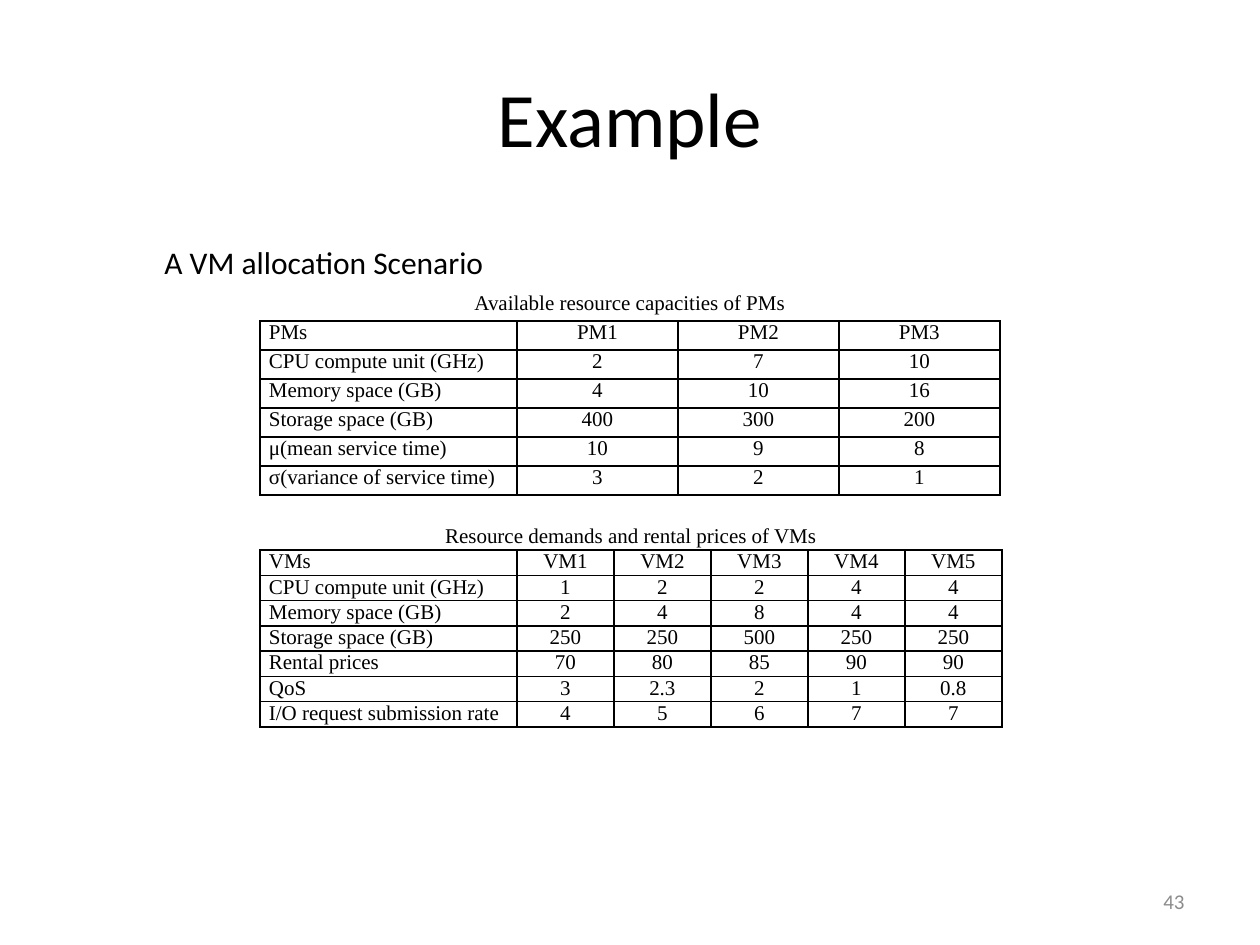
"""Build the VM allocation example slide with its two resource tables."""
from lxml import etree
from pptx import Presentation
from pptx.dml.color import RGBColor
from pptx.enum.text import MSO_ANCHOR, PP_ALIGN
from pptx.oxml.ns import qn
from pptx.util import Pt

LEFT, CENTER, RIGHT = PP_ALIGN.LEFT, PP_ALIGN.CENTER, PP_ALIGN.RIGHT
TOP, MIDDLE = MSO_ANCHOR.TOP, MSO_ANCHOR.MIDDLE
BLACK = RGBColor(0x00, 0x00, 0x00)
GRAY = RGBColor(0x8C, 0x8C, 0x8C)
PX = 914400 // 126
SANS, SERIF = "Calibri", "Times New Roman"
CELL_MARGIN = 9
LABEL_WIDTH = 257

TITLE = "Example"
SUBTITLE = "A VM allocation Scenario"
PAGE_NUMBER = "43"
TABLES = [
    {
        "caption": "Available resource capacities of PMs",
        "top": 292, "row_height": 29, "value_width": 161,
        "rows": [
            ("PMs", "PM1", "PM2", "PM3"),
            ("CPU compute unit (GHz)", "2", "7", "10"),
            ("Memory space (GB)", "4", "10", "16"),
            ("Storage space (GB)", "400", "300", "200"),
            ("μ(mean service time)", "10", "9", "8"),
            ("σ(variance of service time)", "3", "2", "1"),
        ],
    },
    {
        "caption": "Resource demands and rental prices of VMs",
        "top": 525, "row_height": 23, "value_width": 97,
        "rows": [
            ("VMs", "VM1", "VM2", "VM3", "VM4", "VM5"),
            ("CPU compute unit (GHz)", "1", "2", "2", "4", "4"),
            ("Memory space (GB)", "2", "4", "8", "4", "4"),
            ("Storage space (GB)", "250", "250", "500", "250", "250"),
            ("Rental prices", "70", "80", "85", "90", "90"),
            ("QoS", "3", "2.3", "2", "1", "0.8"),
            ("I/O request submission rate", "4", "5", "6", "7", "7"),
        ],
    },
]


def write_text(frame, text, size=12, font=SERIF, color=BLACK, align=LEFT):
    paragraph = frame.paragraphs[0]
    paragraph.alignment = align
    run = paragraph.add_run()
    run.text = text
    run.font.size = Pt(size)
    run.font.name = font
    run.font.color.rgb = color


def place(shape, left, top, width, height):
    shape.left, shape.top = left * PX, top * PX
    shape.width, shape.height = width * PX, height * PX


def add_label(slide, text, box, anchor=TOP, wrap=True, **text_format):
    shape = slide.shapes.add_textbox(*(length * PX for length in box))
    shape.text_frame.word_wrap = wrap
    shape.text_frame.vertical_anchor = anchor
    write_text(shape.text_frame, text, **text_format)


def set_borders(cell, visible):
    properties = cell._tc.get_or_add_tcPr()
    for side in ("L", "R", "T", "B"):
        line = etree.SubElement(properties, qn(f"a:ln{side}"), w=str(Pt(1)))
        if side in visible:
            fill = etree.SubElement(line, qn("a:solidFill"))
            etree.SubElement(fill, qn("a:srgbClr"), val=str(BLACK))
        else:
            etree.SubElement(line, qn("a:noFill"))


def add_resource_table(slide, caption, top, row_height, value_width, rows):
    column_count = len(rows[0])
    row_count = len(rows) + 1
    widths = [LABEL_WIDTH] + [value_width] * (column_count - 1)
    table = slide.shapes.add_table(
        row_count, column_count, 260 * PX, top * PX,
        sum(widths) * PX, row_count * row_height * PX).table
    table.first_row = table.horz_banding = False
    for column, width in zip(table.columns, widths):
        column.width = width * PX
    for row in table.rows:
        row.height = row_height * PX
    for cell in table.iter_cells():
        cell.margin_left = cell.margin_right = CELL_MARGIN * PX
        cell.margin_top = cell.margin_bottom = 0
    for column_index in range(column_count):
        set_borders(table.cell(0, column_index), "B")
    for row_index, values in enumerate(rows, start=1):
        for column_index, value in enumerate(values):
            cell = table.cell(row_index, column_index)
            set_borders(cell, "LRTB")
            write_text(cell.text_frame, value, align=CENTER if column_index else LEFT)
    for cell in table.iter_cells():
        cell.fill.background()
    table.cell(0, 0).merge(table.cell(0, column_count - 1))
    write_text(table.cell(0, 0).text_frame, caption, align=CENTER)


def main():
    presentation = Presentation()
    presentation.slide_width, presentation.slide_height = 1260 * PX, 945 * PX
    slide = presentation.slides.add_slide(presentation.slide_layouts[5])
    title = slide.shapes.title
    place(title, 63, 38, 1134, 158)
    title.text_frame.vertical_anchor = MIDDLE
    write_text(title.text_frame, TITLE, size=44, font=SANS, align=CENTER)
    add_label(slide, PAGE_NUMBER, (903, 876, 294, 50), anchor=MIDDLE,
              font=SANS, color=GRAY, align=RIGHT)
    for table in TABLES:
        add_resource_table(slide, **table)
    add_label(slide, SUBTITLE, (152, 237, 358, 50), wrap=False, size=18, font=SANS)
    presentation.save("out.pptx")


if __name__ == "__main__":
    main()
